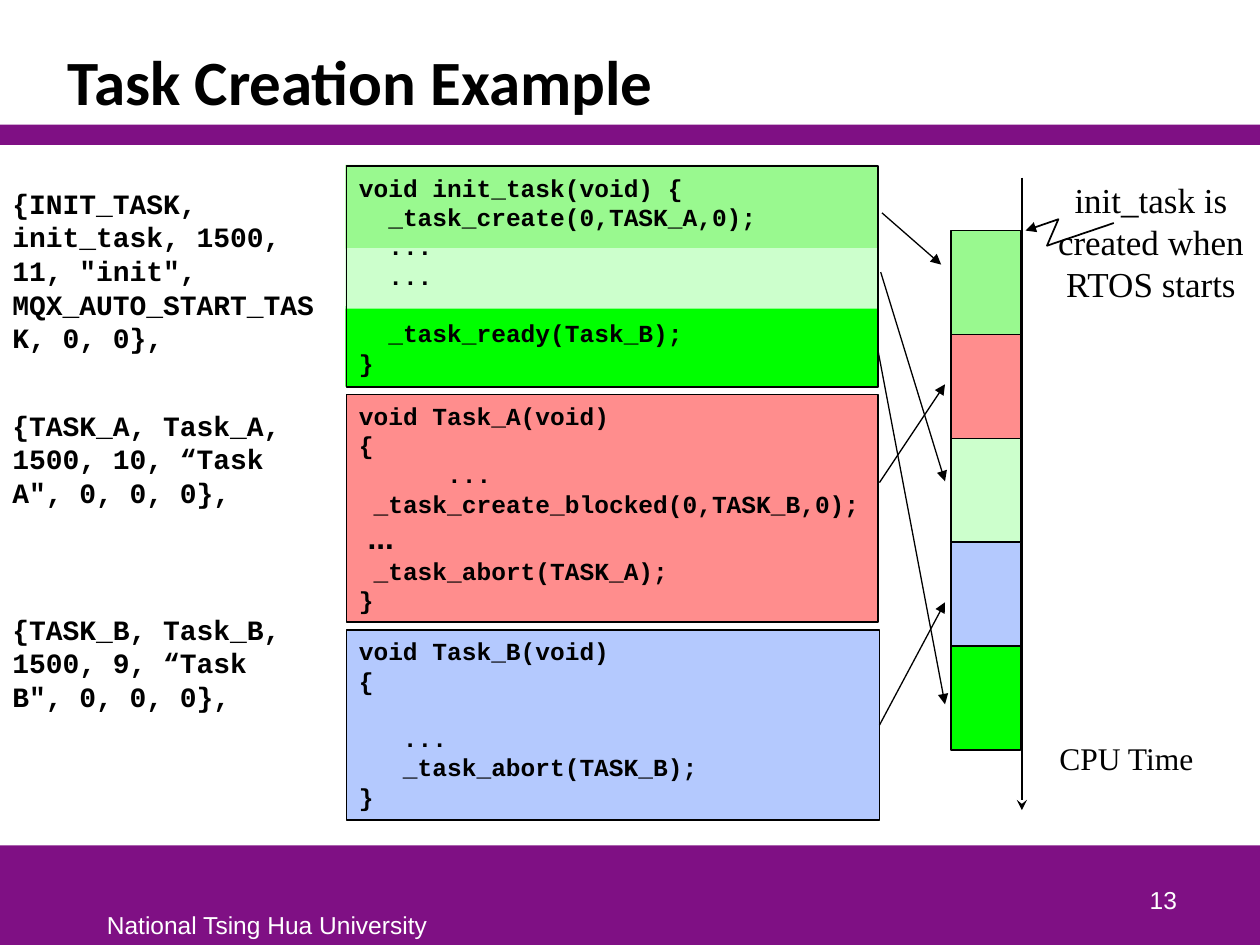
from dataclasses import dataclass

from lxml import etree
from pptx import Presentation
from pptx.dml.color import RGBColor
from pptx.enum.shapes import MSO_CONNECTOR, MSO_SHAPE
from pptx.enum.text import MSO_ANCHOR, PP_ALIGN
from pptx.oxml.ns import qn
from pptx.util import Inches, Pt

STRAIGHT = MSO_CONNECTOR.STRAIGHT
RECTANGLE = MSO_SHAPE.RECTANGLE
TOP, BOTTOM = MSO_ANCHOR.TOP, MSO_ANCHOR.BOTTOM
LEFT, CENTER, RIGHT = PP_ALIGN.LEFT, PP_ALIGN.CENTER, PP_ALIGN.RIGHT
RIGHT_SIDE = 3
COLUMNS, ROWS = 100, 75


@dataclass(frozen=True)
class Theme:
    purple: str = "7F1084"
    black: str = "000000"
    white: str = "FFFFFF"
    init: str = "99F98F"
    init_wait: str = "CCFFCC"
    init_ready: str = "00FF00"
    task_a: str = "FF8D8D"
    task_b: str = "B4C9FE"
    sans: str = "Arial"
    serif: str = "Times New Roman"
    heading: str = "Calibri"
    mono: str = "Courier New"
    title_size: int = 36
    note_size: int = 20
    label_size: int = 18
    entry_size: int = 16
    code_size: int = 14
    code_line: int = 16


class SlideBuilder:
    """Places elements on a grid of COLUMNS by ROWS."""

    def __init__(self, deck, theme):
        self.deck = deck
        self.theme = theme
        self.page = deck.slides.add_slide(deck.slide_layouts[6])

    def x(self, column):
        return round(self.deck.slide_width * column / COLUMNS)

    def y(self, row):
        return round(self.deck.slide_height * row / ROWS)

    def area(self, column, row, width, height):
        return self.x(column), self.y(row), self.x(width), self.y(height)

    def outline(self, shape, width, **ends):
        shape.line.color.rgb = RGBColor.from_string(self.theme.black)
        shape.line.width = Pt(width)
        for end, kind in ends.items():
            etree.SubElement(shape.line._get_or_add_ln(), qn(f"a:{end}End"), type=kind)

    def block(self, area, fill=None, line=None):
        box = self.page.shapes.add_shape(RECTANGLE, *self.area(*area))
        box.shadow.inherit = False
        if fill:
            box.fill.solid()
            box.fill.fore_color.rgb = RGBColor.from_string(fill)
        else:
            box.fill.background()
        if line:
            self.outline(box, line)
        else:
            box.line.fill.background()
        return box

    def fill_text(self, box, lines, size, font, color=None, bold=False, align=LEFT,
                  anchor=TOP, wrap=True, spacing=None):
        """Fill a box; an empty line becomes space before the next paragraph."""
        frame = box.text_frame
        frame.word_wrap = wrap
        frame.vertical_anchor = anchor
        para, gap = None, 0
        for line in lines:
            if not line:
                gap += self.theme.code_line
                continue
            para = frame.add_paragraph() if para else frame.paragraphs[0]
            para.alignment = align
            para.line_spacing = spacing
            if gap:
                para.space_before = Pt(gap)
                gap = 0
            span = para.add_run()
            span.text = line
            looks = {"name": font, "size": Pt(size), "bold": bold}
            for name, value in looks.items():
                setattr(span.font, name, value)
            span.font.color.rgb = RGBColor.from_string(color or self.theme.black)
        return box

    def text(self, area, content, size, font, **options):
        box = self.page.shapes.add_textbox(*self.area(*area))
        return self.fill_text(box, [content], size, font, **options)

    def code(self, area, listing, fill=None):
        box = self.block(area, fill, line=1)
        return self.fill_text(box, listing.split("\n"), self.theme.code_size,
                              self.theme.mono, bold=True)

    def arrow(self, start, end, width=0.75, tip="triangle", source=None):
        line = self.page.shapes.add_connector(
            STRAIGHT, self.x(start[0]), self.y(start[1]), self.x(end[0]), self.y(end[1]))
        if source is not None:
            line.begin_connect(source, RIGHT_SIDE)
        self.outline(line, width, tail=tip)
        etree.SubElement(line._element.spPr, qn("a:effectLst"))

    def zigzag(self, points):
        places = [(self.x(column), self.y(row)) for column, row in points]
        builder = self.page.shapes.build_freeform(*places[0])
        builder.add_line_segments(places[1:], close=False)
        shape = builder.convert_to_shape()
        shape.shadow.inherit = False
        shape.fill.background()
        self.outline(shape, 1, head="triangle")


INIT_CODE = """void init_task(void) {
  _task_create(0,TASK_A,0);
  ...
  ...

  _task_ready(Task_B);
}"""
TASK_A_CODE = """void Task_A(void)
{
      ...
 _task_create_blocked(0,TASK_B,0);
 ...
 _task_abort(TASK_A);
}"""
TASK_B_CODE = """void Task_B(void)
{

   ...
   _task_abort(TASK_B);
}"""
TASK_TABLE = [
    (14.3, 26, 17.2, '{INIT_TASK, init_task, 1500, 11, "init", MQX_AUTO_START_TASK, 0, 0},'),
    (31.9, 25.8, 9.1, '{TASK_A, Task_A, 1500, 10, “Task A", 0, 0, 0},'),
    (48.1, 25.8, 9.1, '{TASK_B, Task_B, 1500, 9, “Task B", 0, 0, 0},'),
]
RUN_ARROWS = [
    ((70, 16.9), (74.7, 21)),
    ((69.8, 38.3), (75, 30.5)),
    ((69.9, 21.6), (75, 38.2)),
    ((69.7, 27.9), (75, 55.9)),
]


def main():
    deck = Presentation()
    deck.slide_width, deck.slide_height = Inches(10), Inches(7.5)
    theme = Theme()
    slide = SlideBuilder(deck, theme)

    for row, height in ((67.1, 7.9), (9.9, 1.6)):
        slide.block((0, row, COLUMNS, height), theme.purple)
    slide.text((4.4, 2.5, 89.7, 7.4), "Task Creation Example", theme.title_size,
               theme.heading, bold=True, anchor=BOTTOM, spacing=0.85)
    slide.text((7.5, 71.7, 27.6, 3.3), "National Tsing Hua University",
               theme.code_size, theme.sans, color=theme.white, wrap=False)
    slide.text((73.6, 68.1, 20.8, 5), "13", theme.code_size, theme.sans,
               color=theme.white, align=RIGHT, anchor=BOTTOM)

    for row, width, height, entry in TASK_TABLE:
        slide.text((0, row, width, height), entry, theme.entry_size, theme.mono, bold=True)

    for row, height, fill in ((24.3, 6.4, theme.init_ready), (13.1, 6.7, theme.init),
                              (19.7, 4.8, theme.init_wait)):
        slide.block((27.4, row, 42.2, height), fill)
    slide.code((27.5, 13.2, 42.2, 17.5), INIT_CODE)
    task_a = slide.code((27.5, 31.3, 42.2, 18.1), TASK_A_CODE, theme.task_a)
    dots = task_a.text_frame.paragraphs[4].runs[0].font
    dots.name, dots.size = theme.sans, Pt(theme.label_size)
    task_b = slide.code((27.5, 50, 42.3, 15.1), TASK_B_CODE, theme.task_b)

    slide.arrow((81.1, 14.1), (81.1, 64.3), width=1, tip="stealth")
    run_order = (theme.init, theme.task_a, theme.init_wait, theme.task_b, theme.init_ready)
    for index, fill in enumerate(run_order):
        slide.block((75.5, 18.3 + 8.25 * index, 5.5, 8.25), fill, line=1)
    slide.text((83.1, 58.2, 12.8, 4), "CPU Time", theme.label_size, theme.serif, wrap=False)

    slide.zigzag([(81.4, 18.3), (84, 17.4), (83.1, 19.5), (88.4, 17.7)])
    slide.text((82.7, 13.7, 17.3, 11), "init_task is created when RTOS starts",
               theme.note_size, theme.serif, align=CENTER)

    for start, end in RUN_ARROWS:
        slide.arrow(start, end)
    slide.arrow((69.8, 57.5), (75, 47.8), source=task_b)

    deck.save("out.pptx")


if __name__ == "__main__":
    main()
